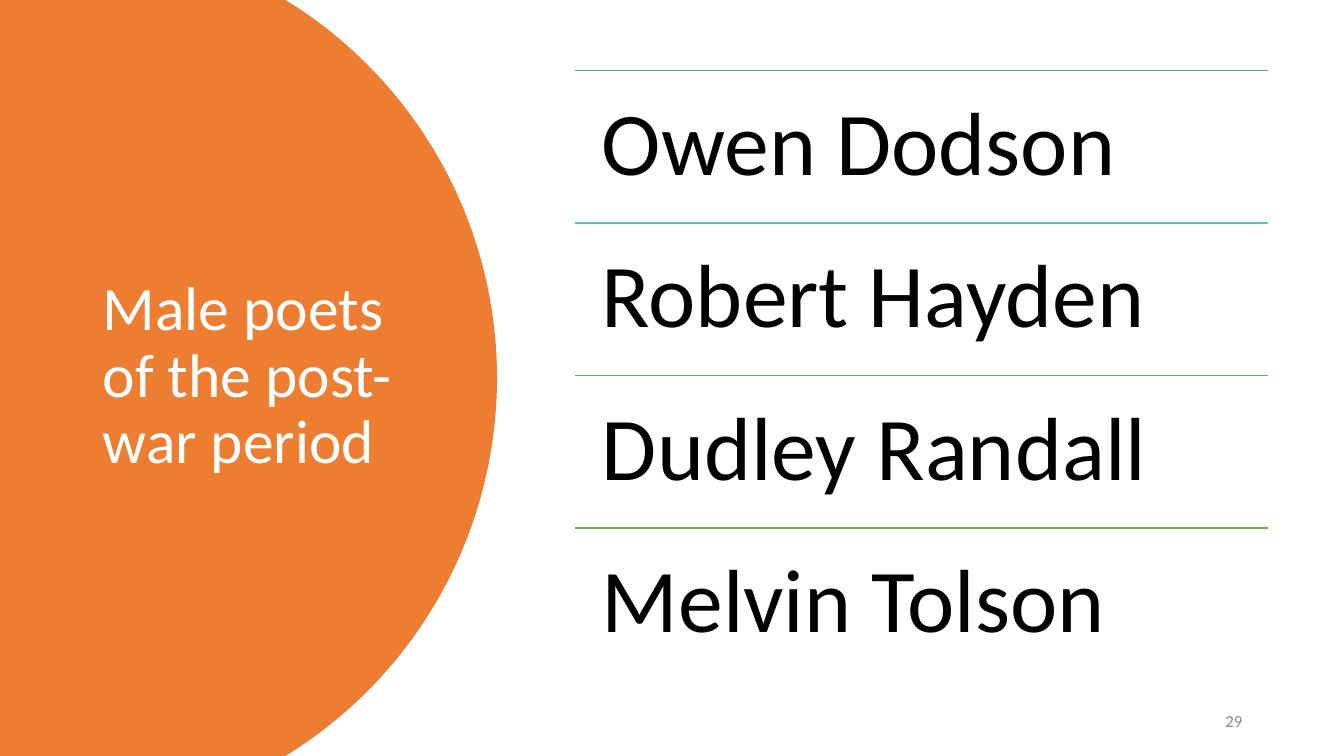
from dataclasses import dataclass
from math import asin, cos, sin

from lxml.etree import SubElement
from pptx import Presentation
from pptx.dml.color import RGBColor
from pptx.enum.text import MSO_ANCHOR, PP_ALIGN
from pptx.oxml.ns import qn
from pptx.util import Inches, Pt


@dataclass(frozen=True)
class Theme:
    font: str = "Calibri"
    panel: str = "ED7D31"
    title: str = "FFFFFF"
    body: str = "000000"
    muted: str = "898989"
    rules: tuple = ("5B9BD5", "52CAB8", "49BF64", "70AD47")
    title_size: int = 44
    poet_size: int = 64
    number_size: int = 12
    rule_width: int = 1


THEME = Theme()
SLIDE_WIDTH, SLIDE_HEIGHT = 13.33, 7.5
POETS = ("Owen Dodson", "Robert Hayden", "Dudley Randall", "Melvin Tolson")


def add_label(slide, box, text, size, color, anchor=MSO_ANCHOR.MIDDLE,
              align=PP_ALIGN.LEFT, line_spacing=1.0, inset=None):
    label = slide.shapes.add_textbox(*map(Inches, box))
    frame = label.text_frame
    frame.word_wrap = True
    frame.vertical_anchor = anchor
    if inset is not None:
        frame.margin_left = frame.margin_right = Inches(inset)
        frame.margin_top = frame.margin_bottom = Inches(inset)
    frame.text = text
    paragraph = frame.paragraphs[0]
    paragraph.alignment = align
    paragraph.line_spacing = line_spacing
    font = paragraph.runs[0].font
    font.name = THEME.font
    font.size = Pt(size)
    font.color.rgb = RGBColor.from_string(color)


def add_rounded_panel(slide, box, radius=4.4, steps=120):
    """Fill the box with a panel whose right edge is a circular arc."""
    left, top, width, height = box
    center_x, center_y = left + width - radius, top + height / 2
    half_angle = asin(height / 2 / radius)
    angles = [half_angle * (2 * i / steps - 1) for i in range(steps + 1)]
    arc = [(Inches(center_x + radius * cos(a)), Inches(center_y + radius * sin(a)))
           for a in angles]
    bottom_left = (Inches(left), Inches(top + height))
    outline = slide.shapes.build_freeform(Inches(left), Inches(top))
    outline.add_line_segments(arc + [bottom_left], close=True)
    panel = outline.convert_to_shape()
    panel.shadow.inherit = False
    panel.fill.solid()
    panel.fill.fore_color.rgb = RGBColor.from_string(THEME.panel)
    panel.line.fill.background()


def add_title_panel(slide, box):
    left, top, _, _ = box
    add_rounded_panel(slide, box)
    add_label(slide, (left + 0.92, top + 0.7, 3.23, 6.09),
              "Male poets of the post-war period",
              THEME.title_size, THEME.title, line_spacing=0.9)


def add_rule(slide, left, top, width, color):
    rule = slide.shapes.add_connector(
        1, Inches(left), Inches(top), Inches(left + width), Inches(top))
    rule.line.color.rgb = RGBColor.from_string(color)
    rule.line.width = Pt(THEME.rule_width)
    SubElement(rule._element.spPr, qn("a:effectLst"))


def add_poet_list(slide, box):
    left, top, width, height = box
    row_height = height / len(POETS)
    for row, (poet, color) in enumerate(zip(POETS, THEME.rules)):
        row_top = top + row * row_height
        add_rule(slide, left, row_top, width, color)
        add_label(slide, (left, row_top, width, row_height), poet,
                  THEME.poet_size, THEME.body, anchor=MSO_ANCHOR.TOP,
                  line_spacing=0.9, inset=0.27)


def add_slide_number(slide, box):
    add_label(slide, box, "29", THEME.number_size, THEME.muted,
              align=PP_ALIGN.RIGHT)


def main():
    deck = Presentation()
    deck.slide_width = Inches(SLIDE_WIDTH)
    deck.slide_height = Inches(SLIDE_HEIGHT)
    slide = deck.slides.add_slide(deck.slide_layouts[6])
    add_title_panel(slide, (0, 0, 4.93, SLIDE_HEIGHT))
    add_slide_number(slide, (9.42, 6.95, 3, 0.4))
    add_poet_list(slide, (5.7, 0.7, 6.88, 6.05))
    deck.save("out.pptx")


if __name__ == "__main__":
    main()
